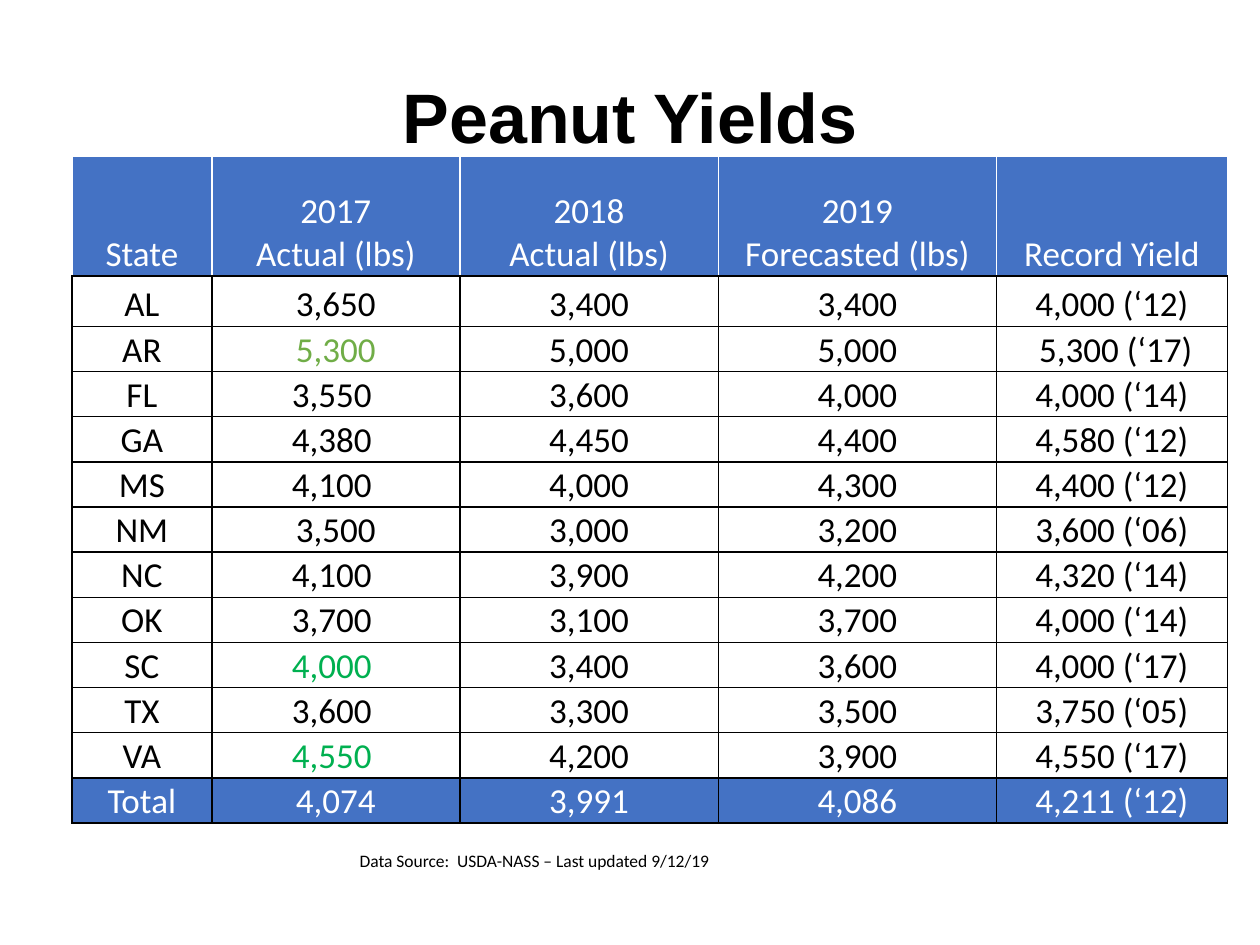
from dataclasses import dataclass
from typing import NamedTuple

from lxml.etree import SubElement
from pptx import Presentation
from pptx.dml.color import RGBColor
from pptx.enum.text import MSO_ANCHOR, PP_ALIGN
from pptx.oxml.ns import qn
from pptx.util import Cm, Pt


@dataclass(frozen=True)
class Theme:
    black: str = "000000"
    white: str = "FFFFFF"
    blue: str = "4472C4"
    lime: str = "70AD47"
    green: str = "00B050"
    head_font: str = "Arial"
    body_font: str = "Calibri"
    title_size: int = 40
    table_size: int = 20
    note_size: int = 10


class Yield(NamedTuple):
    state: str
    actual_2017: str
    actual_2018: str
    forecast_2019: str
    record: str


T = Theme()
HEADER = Yield("State", "2017\nActual (lbs)", "2018\nActual (lbs)",
               "2019\nForecasted (lbs)", "Record Yield")
YIELDS = [
    Yield("AL", "3,650", "3,400", "3,400", "4,000 (‘12)"),
    Yield("AR", "5,300", "5,000", "5,000", " 5,300 (‘17)"),
    Yield("FL", "3,550 ", "3,600", "4,000", "4,000 (‘14)"),
    Yield("GA", "4,380 ", "4,450", "4,400", "4,580 (‘12)"),
    Yield("MS", "4,100 ", "4,000", "4,300", "4,400 (‘12)"),
    Yield("NM", "3,500", "3,000", "3,200", "3,600 (‘06)"),
    Yield("NC", "4,100 ", "3,900", "4,200", "4,320 (‘14)"),
    Yield("OK", "3,700 ", "3,100", "3,700", "4,000 (‘14)"),
    Yield("SC", "4,000 ", "3,400", "3,600", "4,000 (‘17)"),
    Yield("TX", "3,600 ", "3,300", "3,500", "3,750 (‘05)"),
    Yield("VA", "4,550 ", "4,200", "3,900", "4,550 (‘17)"),
]
TOTAL = Yield("Total", "4,074", "3,991", "4,086", "4,211 (‘12)")
RECORD_COLORS = {"AR": T.lime, "SC": T.green, "VA": T.green}
COL_WIDTHS = [2.82, 5, 5.21, 5.61, 4.65]
ROW_HEIGHTS = [2.41, 1.02] + [0.91] * 11


def add_run(p, text: str, font: str, size: int, color: str, bold: bool = False) -> None:
    """Add one formatted run to a paragraph."""
    r = p.add_run()
    r.text = text
    r.font.name = font
    r.font.size = Pt(size)
    r.font.bold = bold
    r.font.color.rgb = RGBColor.from_string(color)


def set_borders(cell, side_color: str, bottom_color: str) -> None:
    """Draw one-point lines on the four sides of a cell."""
    tc_pr = cell._tc.get_or_add_tcPr()
    for side in "LRTB":
        ln = SubElement(tc_pr, qn(f"a:ln{side}"), w=str(Pt(1)))
        fill = SubElement(ln, qn("a:solidFill"))
        color = bottom_color if side == "B" else side_color
        SubElement(fill, qn("a:srgbClr"), val=color)


def fill_cell(cell, text: str, color: str, fill: str, line: str) -> None:
    """Format a table cell and write its centred text."""
    set_borders(cell, line, T.black)
    cell.fill.solid()
    cell.fill.fore_color.rgb = RGBColor.from_string(fill)
    cell.vertical_anchor = MSO_ANCHOR.BOTTOM
    cell.margin_left = cell.margin_right = cell.margin_top = Cm(0.02)
    cell.margin_bottom = 0
    p = cell.text_frame.paragraphs[0]
    p.alignment = PP_ALIGN.CENTER
    for i, part in enumerate(text.split("\n")):
        if i:
            p.add_line_break()
        add_run(p, part, T.body_font, T.table_size, color)


def add_title(s, text: str) -> None:
    """Place and format the slide title."""
    sp = s.shapes.title
    sp.left, sp.top, sp.width, sp.height = Cm(1.75), Cm(1.55), Cm(21.9), Cm(3.15)
    tf = sp.text_frame
    tf.word_wrap = True
    tf.vertical_anchor = MSO_ANCHOR.TOP
    p = tf.paragraphs[0]
    p.alignment = PP_ALIGN.CENTER
    p.line_spacing = 0.9
    add_run(p, text, T.head_font, T.title_size, T.black, bold=True)


def add_yield_table(s) -> None:
    """Add the table of yields by state."""
    rows = [HEADER, *YIELDS, TOTAL]
    tbl = s.shapes.add_table(len(rows), len(COL_WIDTHS), Cm(1.45), Cm(3.15),
                             Cm(sum(COL_WIDTHS)), Cm(sum(ROW_HEIGHTS))).table
    tbl.horz_banding = False
    for col, width in zip(tbl.columns, COL_WIDTHS):
        col.width = Cm(width)
    for row, height, data in zip(tbl.rows, ROW_HEIGHTS, rows):
        row.height = Cm(height)
        banner = data in (HEADER, TOTAL)
        fill = T.blue if banner else T.white
        line = T.white if data is HEADER else T.black
        for i, (cell, text) in enumerate(zip(row.cells, data)):
            color = T.white if banner else T.black
            if i == 1:
                color = RECORD_COLORS.get(data.state, color)
            fill_cell(cell, text, color, fill, line)


def add_note(s, text: str) -> None:
    """Add the source note under the table."""
    tf = s.shapes.add_textbox(Cm(7), Cm(17.02), Cm(10.92), Cm(0.69)).text_frame
    tf.word_wrap = True
    add_run(tf.paragraphs[0], text, T.body_font, T.note_size, T.black)


def main() -> None:
    """Build and save the slide."""
    prs = Presentation()
    prs.slide_width, prs.slide_height = Cm(25.4), Cm(19.05)
    s = prs.slides.add_slide(prs.slide_layouts[5])
    add_title(s, "Peanut Yields")
    add_yield_table(s)
    add_note(s, "Data Source:  USDA-NASS – Last updated 9/12/19")
    prs.save("out.pptx")


if __name__ == "__main__":
    main()
